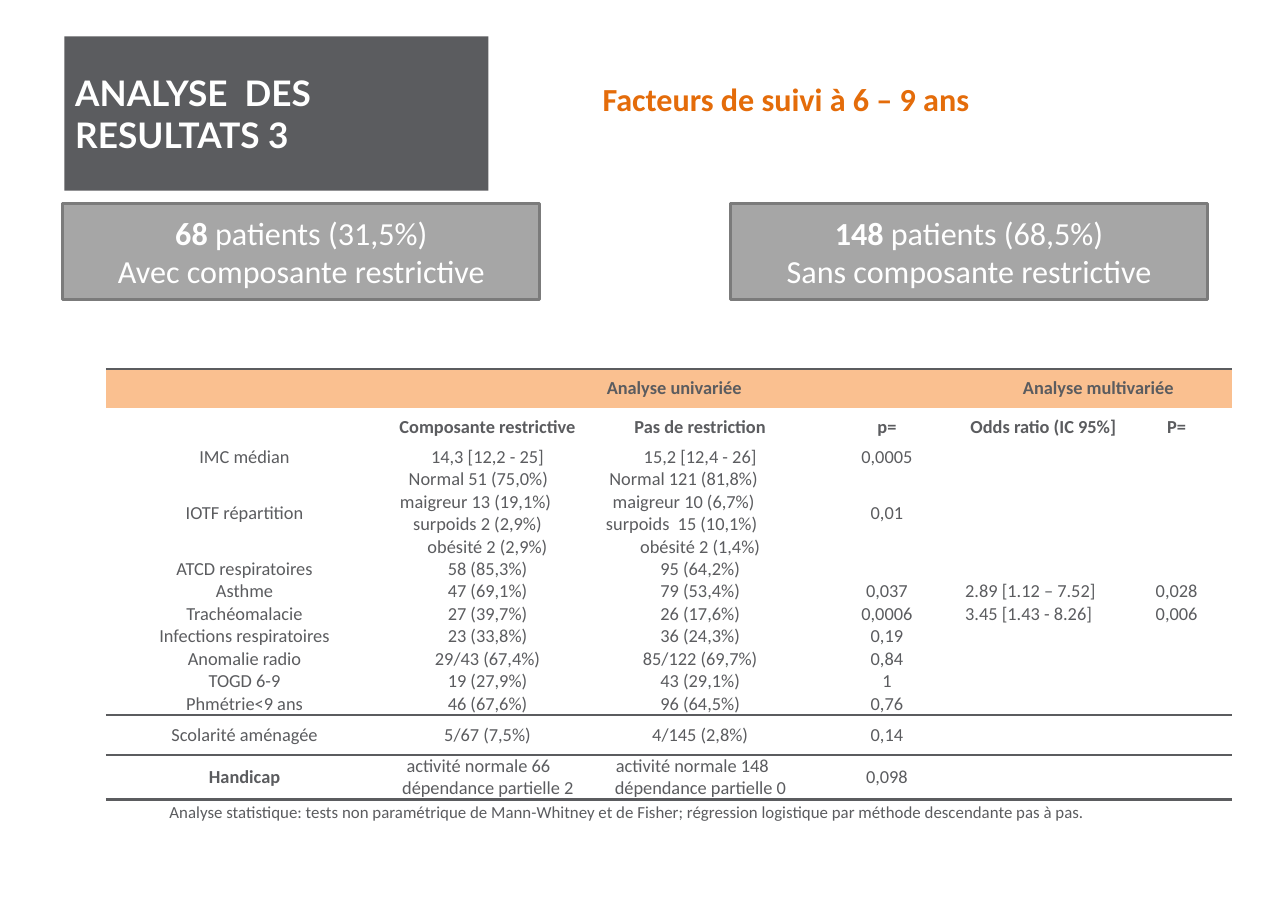
from lxml.etree import SubElement
from pptx import Presentation
from pptx.dml.color import RGBColor
from pptx.enum.shapes import MSO_SHAPE
from pptx.enum.text import MSO_ANCHOR, PP_ALIGN
from pptx.oxml import parse_xml
from pptx.oxml.ns import nsdecls, qn
from pptx.util import Inches, Pt

INK = {"dark": "5B5C5F", "box": "A6A6A6", "edge": "7B7B7B",
       "head": "FAC090", "white": "FFFFFF", "warm": "E46C0A"}
COLS = [21.56, 16.17, 16.85, 12.15, 12.15, 8.55]
ROWS = [4.23, 4.23, 2.46, 9.84] + [2.46] * 7 + [4.35, 4.92]
RULES = {(0, "T"): 2, (10, "B"): 1, (11, "T"): 1,
         (11, "B"): 1.5, (12, "T"): 1.5, (12, "B"): 2}
BOLD = {(0, 1), (0, 4), (12, 0)} | {(1, col) for col in range(6)}
DATA = [
    ["", "Analyse univariée", "", "", "Analyse multivariée"],
    ["", "Composante restrictive", "Pas de restriction", "p=", "Odds ratio (IC 95%]", "P="],
    ["IMC médian", "14,3 [12,2 - 25]", "15,2 [12,4 - 26]", "0,0005"],
    ["IOTF répartition",
     [(0.23, "Normal 51 (75,0%)"), (0.15, "maigreur 13 (19,1%)"),
      (0.27, "surpoids 2 (2,9%)"), (0.4, "obésité 2 (2,9%)")],
     [(0.16, "Normal 121 (81,8%)"), (0.19, "maigreur 10 (6,7%)"),
      (0.13, "surpoids  15 (10,1%)"), (0.44, "obésité 2 (1,4%)")],
     "0,01"],
    ["ATCD respiratoires", "58 (85,3%)", "95 (64,2%)"],
    ["Asthme", "47 (69,1%)", "79 (53,4%)", "0,037", [(0, "2.89 [1.12 – 7.52]")], "0,028"],
    ["Trachéomalacie", "27 (39,7%)", "26 (17,6%)", "0,0006", [(0, "3.45 [1.43 - 8.26]")], "0,006"],
    ["Infections respiratoires", "23 (33,8%)", "36 (24,3%)", "0,19"],
    ["Anomalie radio", "29/43 (67,4%)", "85/122 (69,7%)", "0,84"],
    ["TOGD 6-9", "19 (27,9%)", "43 (29,1%)", "1"],
    ["Phmétrie<9 ans", "46 (67,6%)", "96 (64,5%)", "0,76"],
    ["Scolarité aménagée", "5/67 (7,5%)", "4/145 (2,8%)", "0,14"],
    ["Handicap",
     [(0.21, "activité normale 66"), (0.17, "dépendance partielle 2")],
     [(0.22, "activité normale 148"), (0.21, "dépendance partielle 0")],
     "0,098"],
]


class Page:
    """Draws styled elements on one slide, measured on a grid of 100 by 100."""

    def __init__(self, deck):
        self.deck = deck
        self.slide = deck.slides.add_slide(deck.slide_layouts[6])
        self.face = "Calibri"

    def wide(self, cols):
        return round(self.deck.slide_width * cols / 100)

    def high(self, rows):
        return round(self.deck.slide_height * rows / 100)

    def area(self, left, top, width, height):
        return self.wide(left), self.high(top), self.wide(width), self.high(height)

    def piece(self, para, text, ink, **form):
        run = para.add_run()
        run.text = text
        for key, value in ({"name": self.face} | form).items():
            setattr(run.font, key, value)
        run.font.color.rgb = RGBColor.from_string(INK[ink])

    def paint(self, part, ink):
        part.fill.solid()
        part.fill.fore_color.rgb = RGBColor.from_string(INK[ink])

    def prose(self, frame, lines, ink, align=PP_ALIGN.LEFT, **form):
        frame.word_wrap = True
        for num, line in enumerate(lines):
            para = frame.add_paragraph() if num else frame.paragraphs[0]
            para.alignment = align
            for text, bold in line:
                self.piece(para, text, ink, bold=bold, **form)

    def box(self, area, ink, edge, lines, **form):
        shape = self.slide.shapes.add_shape(MSO_SHAPE.RECTANGLE, *self.area(*area))
        shape.shadow.inherit = False
        self.paint(shape, ink)
        if edge:
            shape.line.color.rgb = RGBColor.from_string(INK[edge])
            shape.line.width = Pt(2)
        else:
            shape.line.fill.background()
        shape.text_frame.vertical_anchor = MSO_ANCHOR.MIDDLE
        self.prose(shape.text_frame, lines, "white", **form)

    def label(self, area, text, ink, bold, size):
        frame = self.slide.shapes.add_textbox(*self.area(*area)).text_frame
        self.prose(frame, [[(text, bold)]], ink, size=size)

    def rule(self, cell, side, width):
        color = (f'<a:solidFill><a:srgbClr val="{INK["dark"]}"/></a:solidFill>'
                 if width else "<a:noFill/>")
        line = parse_xml(f'<a:ln{side} {nsdecls("a")} w="{Pt(width)}">{color}</a:ln{side}>')
        cell._tc.get_or_add_tcPr().insert(0, line)

    def cell(self, cell, row, col, data):
        self.paint(cell, "white" if row else "head")
        for key in ("margin_left", "margin_top", "margin_right", "margin_bottom"):
            setattr(cell, key, 0)
        cell.vertical_anchor = MSO_ANCHOR.MIDDLE
        for side in "BTRL":
            self.rule(cell, side, RULES.get((row, side), 0))
        frame = cell.text_frame
        if not data:
            SubElement(frame.paragraphs[0]._p, qn("a:endParaRPr"), sz="1200")
            return
        plain = isinstance(data, str)
        texts = [data] if plain else [text for _, text in data]
        self.prose(frame, [[(text, (row, col) in BOLD)] for text in texts], "dark",
                   PP_ALIGN.CENTER if plain else PP_ALIGN.LEFT, size=Pt(12))
        if not plain:
            for para, (left, _) in zip(frame.paragraphs, data):
                para._p.get_or_add_pPr().set("marL", str(Inches(left)))

    def table(self, left, top):
        area = self.area(left, top, sum(COLS), sum(ROWS))
        table = self.slide.shapes.add_table(len(ROWS), len(COLS), *area).table
        table.first_row = table.horz_banding = False
        for part, size in zip(table.columns, COLS):
            part.width = self.wide(size)
        for part, size in zip(table.rows, ROWS):
            part.height = self.high(size)
        for row, line in enumerate(DATA):
            for col in range(len(COLS)):
                data = line[col] if col < len(line) else ""
                self.cell(table.cell(row, col), row, col, data)
        for first, last in ((1, 3), (4, 5)):
            table.cell(0, first).merge(table.cell(0, last))


def main():
    deck = Presentation()
    deck.slide_width, deck.slide_height = Inches(11.69), Inches(8.27)
    page = Page(deck)
    page.box((5, 4, 32.93, 16.93), "dark", None,
             [[("ANALYSE  DES RESULTATS 3", True)]], size=Pt(23), name="Lato")
    for left, count, rest, kind in ((4.88, "68", " patients (31,5%)", "Avec"),
                                    (56.72, "148", " patients (68,5%)", "Sans")):
        page.box((left, 22.37, 37.04, 10.52), "box", "edge",
                 [[(count, True), (rest, False)], [(f"{kind} composante restrictive", False)]],
                 align=PP_ALIGN.CENTER, size=Pt(21))
    page.table(8.21, 40.51)
    page.label((45.94, 8.1, 46.45, 5.44), "Facteurs de suivi à 6 – 9 ans", "warm", True, Pt(21))
    page.label((12.32, 87.42, 86.23, 3.51),
               "Analyse statistique: tests non paramétrique de Mann-Whitney et de Fisher; "
               "régression logistique par méthode descendante pas à pas.", "dark", False, Pt(11))
    deck.save("out.pptx")


if __name__ == "__main__":
    main()
